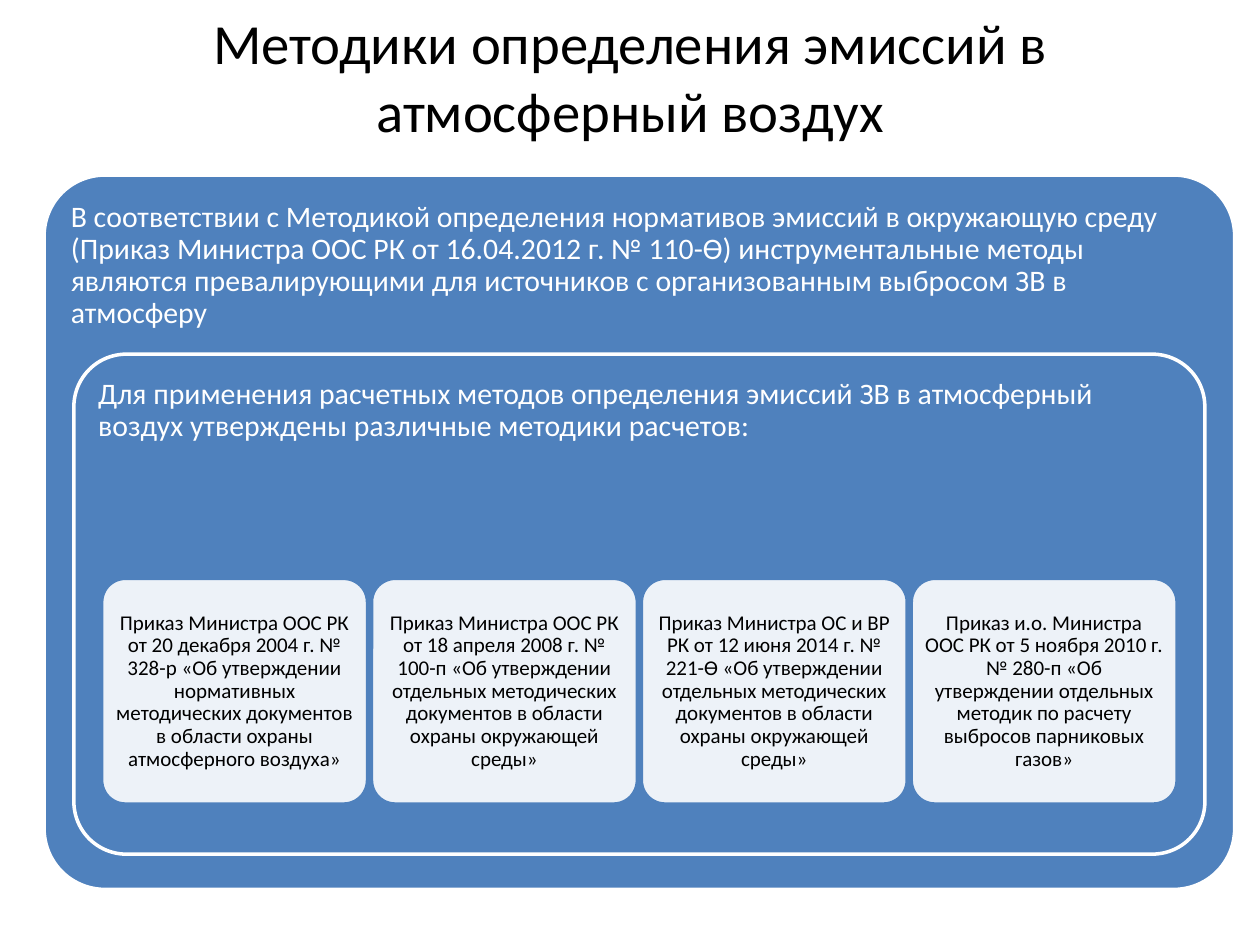
import dataclasses

import lxml.etree
import pptx
import pptx.dml.color
import pptx.enum.shapes
import pptx.enum.text
import pptx.oxml.ns
import pptx.util

Cm = pptx.util.Cm
Pt = pptx.util.Pt
Align = pptx.enum.text.PP_ALIGN
Anchor = pptx.enum.text.MSO_ANCHOR


@dataclasses.dataclass(frozen=True)
class Theme:
    font: str = "Calibri"
    blue: str = "4F81BD"
    white: str = "FFFFFF"
    black: str = "000000"
    title_size: float = 32.4
    panel_size: float = 17
    card_size: float = 12
    line_width: float = 2


@dataclasses.dataclass(frozen=True)
class Box:
    left: float
    top: float
    width: float
    height: float

    def inner(self, left, top, width, height):
        return Box(self.left + left, self.top + top, width, height)

    def lengths(self):
        return Cm(self.left), Cm(self.top), Cm(self.width), Cm(self.height)


THEME = Theme()
TITLE = "Методики определения эмиссий в атмосферный воздух"
INSTRUMENTAL_METHODS = (
    "В соответствии с Методикой определения нормативов эмиссий в окружающую среду "
    "(Приказ Министра ООС РК от 16.04.2012 г. № 110-Ө) инструментальные методы "
    "являются превалирующими для источников с организованным выбросом ЗВ в атмосферу"
)
CALCULATION_METHODS = (
    "Для применения расчетных методов определения эмиссий ЗВ в атмосферный воздух "
    "утверждены различные методики расчетов:"
)
ORDERS = [
    "Приказ Министра ООС РК от 20 декабря 2004 г. № 328-р «Об утверждении "
    "нормативных методических документов в области охраны атмосферного воздуха»",
    "Приказ Министра ООС РК от 18 апреля 2008 г. № 100-п «Об утверждении "
    "отдельных методических документов в области охраны окружающей среды»",
    "Приказ Министра ОС и ВР РК от 12 июня 2014 г. № 221-Ө «Об утверждении "
    "отдельных методических документов в области охраны окружающей среды»",
    "Приказ и.о. Министра ООС РК от 5 ноября 2010 г. № 280-п «Об утверждении "
    "отдельных методик по расчету выбросов парниковых газов»",
]


def rgb(value):
    return pptx.dml.color.RGBColor.from_string(value)


def write_text(frame, text, size, color, align, anchor):
    frame.word_wrap = True
    frame.auto_size = pptx.enum.text.MSO_AUTO_SIZE.NONE
    frame.vertical_anchor = anchor
    frame.text = text
    paragraph = frame.paragraphs[0]
    paragraph.alignment = align
    paragraph.font.name = THEME.font
    paragraph.font.size = Pt(size)
    paragraph.font.color.rgb = rgb(color)
    return paragraph


def add_rounded_box(slide, box, corner, fill, line, inset, text, size, color, align, anchor):
    shape = slide.shapes.add_shape(
        pptx.enum.shapes.MSO_SHAPE.ROUNDED_RECTANGLE, *box.lengths()
    )
    shape.adjustments[0] = corner
    shape.shadow.inherit = False
    shape.fill.solid()
    shape.fill.fore_color.rgb = rgb(fill)
    shape.line.color.rgb = rgb(line)
    shape.line.width = Pt(THEME.line_width)
    frame = shape.text_frame
    frame.margin_left = frame.margin_right = Cm(inset)
    frame.margin_top = frame.margin_bottom = Cm(inset)
    write_text(frame, text, size, color, align, anchor).line_spacing = 0.9
    return shape


def set_opacity(shape, percent):
    color = shape.element.spPr.find(
        pptx.oxml.ns.qn("a:solidFill") + "/" + pptx.oxml.ns.qn("a:srgbClr")
    )
    alpha = lxml.etree.SubElement(color, pptx.oxml.ns.qn("a:alpha"))
    alpha.set("val", str(percent * 1000))


def place_title(slide, box):
    title = slide.shapes.title
    title.left, title.top, title.width, title.height = box.lengths()
    write_text(
        title.text_frame, TITLE, THEME.title_size, THEME.black, Align.CENTER, Anchor.MIDDLE
    )


def place_panel(slide, box, corner, text):
    add_rounded_box(
        slide, box, corner, THEME.blue, THEME.white, 0.18,
        text, THEME.panel_size, THEME.white, Align.LEFT, Anchor.TOP,
    )


def place_order_cards(slide, box, gap=0.08):
    width = (box.width - gap * (len(ORDERS) - 1)) / len(ORDERS)
    for index, order in enumerate(ORDERS):
        card = add_rounded_box(
            slide, box.inner(index * (width + gap), 0, width, box.height), 0.105,
            THEME.white, THEME.blue, 0.13,
            order, THEME.card_size, THEME.black, Align.CENTER, Anchor.MIDDLE,
        )
        set_opacity(card, 90)


def place_methods(slide, box):
    place_panel(slide, box, 0.085, INSTRUMENTAL_METHODS)
    calculation = box.inner(0.6, 3.61, box.width - 1.2, 10.08)
    place_panel(slide, calculation, 0.105, CALCULATION_METHODS)
    place_order_cards(slide, calculation.inner(0.56, 4.52, calculation.width - 1.12, 4.55))


def main():
    presentation = pptx.Presentation()
    presentation.slide_width = Cm(25.4)
    presentation.slide_height = Cm(19.05)
    slide = presentation.slides.add_slide(presentation.slide_layouts[5])
    place_title(slide, Box(1.27, 0.33, 22.86, 2.41))
    place_methods(slide, Box(0.89, 3.53, 24, 14.4))
    presentation.save("out.pptx")


if __name__ == "__main__":
    main()
